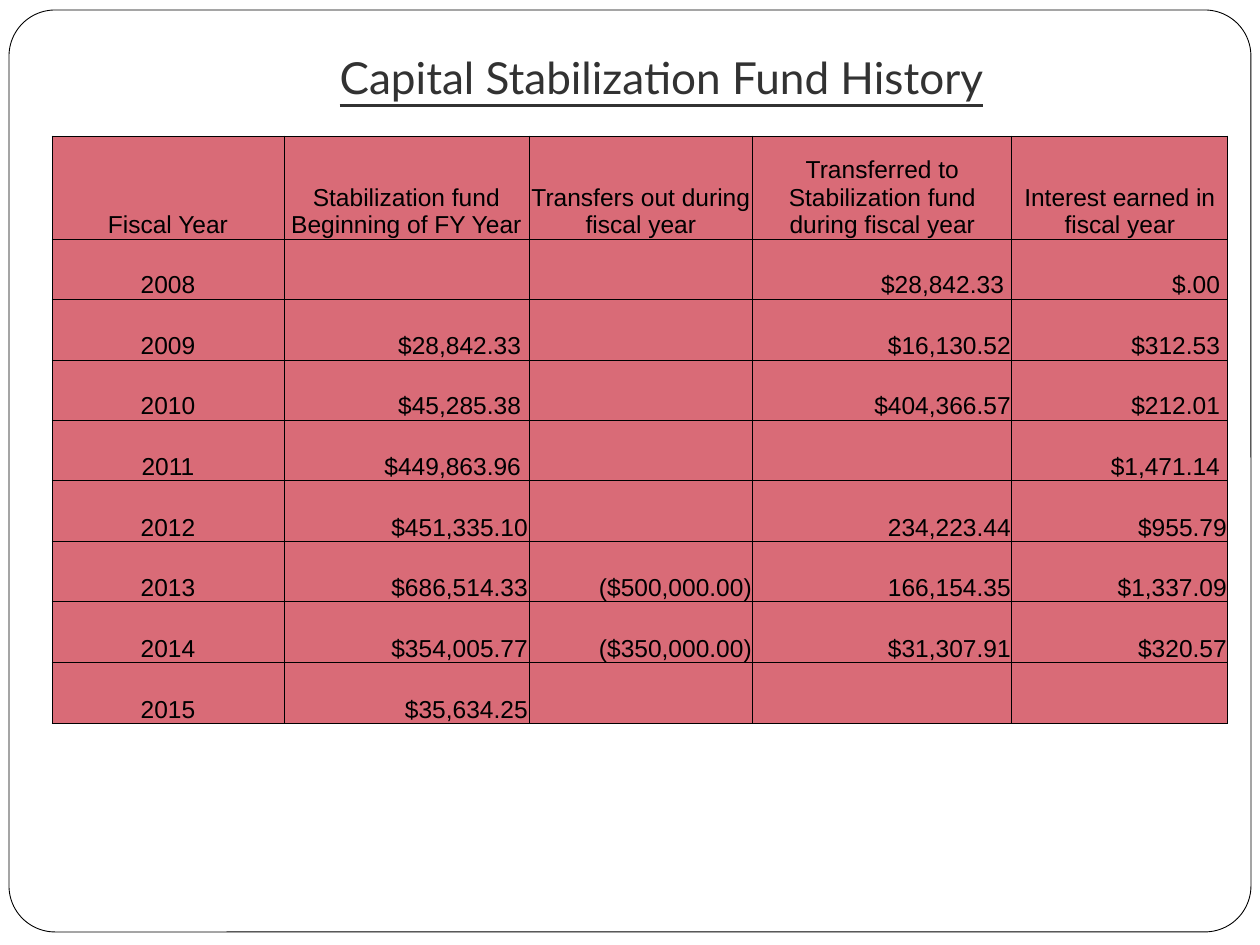
"""Builds the Capital Stabilization Fund History slide."""
from lxml import etree
from pptx import Presentation, util as u
from pptx.dml.color import RGBColor
from pptx.enum import shapes, text
from pptx.oxml.ns import qn

SCALE = 914400 // 126
COLORS = {"paper": "FFFFFF", "ink": "000000", "title": "323232", "cell": "D96B77"}
COLS = [232, 245, 224, 259, 216]
HEAD, BODY = 103, 485
ROWS = [
    ["Fiscal Year", "Stabilization fund Beginning of FY Year",
     "Transfers out during fiscal year",
     "Transferred to Stabilization fund during fiscal year",
     "Interest earned in fiscal year"],
    ["2008", "", "", "$28,842.33 ", "$.00 "],
    ["2009", "$28,842.33 ", "", "$16,130.52", "$312.53 "],
    ["2010", "$45,285.38 ", "", "$404,366.57", "$212.01 "],
    ["2011", "$449,863.96 ", "", "", "$1,471.14 "],
    ["2012", "$451,335.10", "", "234,223.44", "$955.79"],
    ["2013", "$686,514.33", "($500,000.00)", "166,154.35", "$1,337.09"],
    ["2014", "$354,005.77", "($350,000.00)", "$31,307.91", "$320.57"],
    ["2015", "$35,634.25", "", "", ""],
]


def px(*vals):
    """Turn pixel lengths into EMU."""
    return [u.Emu(v * SCALE) for v in vals]


def color(name):
    """Look up a colour by its role."""
    return RGBColor.from_string(COLORS[name])


def style(para, face, size, tint, align):
    """Format a paragraph and its runs."""
    para.alignment = align
    for run in para.runs:
        run.font.name = face
        run.font.size = u.Pt(size)
        run.font.color.rgb = color(tint)


def add_frame(slide):
    """Draw the rounded outline around the slide."""
    box = slide.shapes.add_shape(
        shapes.MSO_SHAPE.ROUNDED_RECTANGLE, *px(9, 10, 1242, 922))
    box.adjustments[0] = 0.05
    box.shadow.inherit = False
    box.fill.solid()
    box.fill.fore_color.rgb = color("paper")
    box.line.color.rgb = color("ink")
    box.line.width = u.Pt(0.5)


def add_title(slide, words):
    """Write the underlined heading."""
    frame = slide.shapes.add_textbox(*px(126, 38, 1071, 78)).text_frame
    frame.word_wrap = True
    frame.vertical_anchor = text.MSO_ANCHOR.BOTTOM
    frame.margin_bottom = px(13)[0]
    frame.text = words
    para = frame.paragraphs[0]
    style(para, "Lato", 25.2, "title", text.PP_ALIGN.CENTER)
    para.runs[0].font.underline = True


def add_edges(cell):
    """Give a cell thin borders on all four sides."""
    props = cell._tc.get_or_add_tcPr()
    for spot, side in enumerate(("lnL", "lnR", "lnT", "lnB")):
        edge = etree.Element(qn(f"a:{side}"), w=str(u.Pt(0.5)))
        fill = etree.SubElement(edge, qn("a:solidFill"))
        etree.SubElement(fill, qn("a:srgbClr"), val=COLORS["ink"])
        props.insert(spot, edge)


def fill_cell(cell, words, align):
    """Set the text, fill and borders of one cell."""
    cell.fill.solid()
    cell.fill.fore_color.rgb = color("cell")
    cell.margin_left = cell.margin_right = cell.margin_top = px(1)[0]
    cell.margin_bottom = 0
    cell.vertical_anchor = text.MSO_ANCHOR.BOTTOM
    cell.text = words
    style(cell.text_frame.paragraphs[0], "Arial", 14, "ink", align)
    add_edges(cell)


def add_grid(slide):
    """Add the table of yearly fund values."""
    place = px(52, 136, sum(COLS), HEAD + BODY)
    table = slide.shapes.add_table(len(ROWS), len(COLS), *place).table
    for col, width in zip(table.columns, px(*COLS)):
        col.width = width
    count = len(ROWS) - 1
    steps = [BODY * n // count for n in range(count + 1)]
    highs = [HEAD] + [end - top for top, end in zip(steps, steps[1:])]
    for row, high in zip(table.rows, px(*highs)):
        row.height = high
    for r, row in enumerate(ROWS):
        for c, words in enumerate(row):
            mid = r == 0 or c == 0
            align = text.PP_ALIGN.CENTER if mid else text.PP_ALIGN.RIGHT
            fill_cell(table.cell(r, c), words, align)


def main():
    """Build and save the slide."""
    deck = Presentation()
    deck.slide_width, deck.slide_height = px(1260, 945)
    slide = deck.slides.add_slide(deck.slide_layouts[6])
    add_frame(slide)
    add_title(slide, "Capital Stabilization Fund History")
    add_grid(slide)
    deck.save("out.pptx")


if __name__ == "__main__":
    main()
